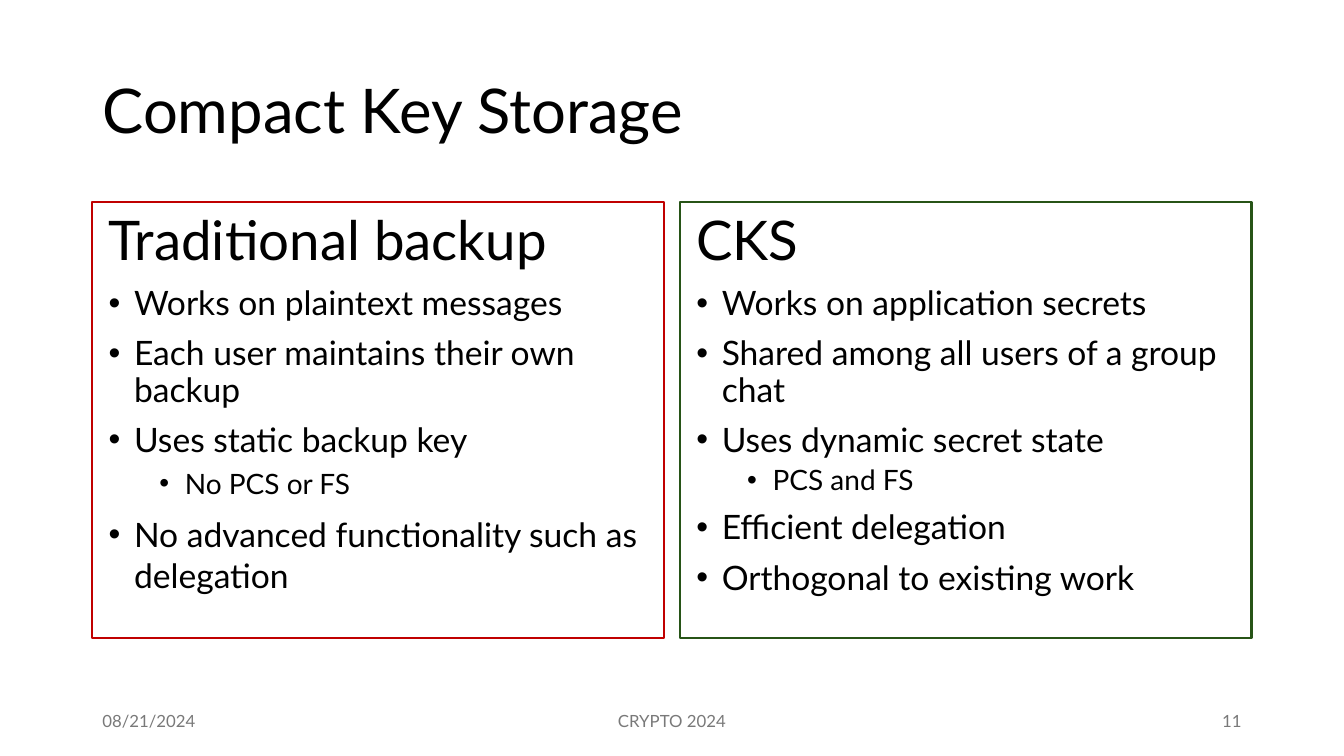
from lxml.etree import SubElement
from pptx import Presentation
from pptx.dml.color import RGBColor
from pptx.enum.shapes import MSO_SHAPE
from pptx.enum.text import MSO_ANCHOR, MSO_AUTO_SIZE, PP_ALIGN
from pptx.oxml.ns import qn
from pptx.util import Cm, Pt

FONT = "Lato"
MARGIN = 2.33
CONTENT_WIDTH = 29.21
PANEL_WIDTH = 14.4
PANEL_HEIGHT = 11
INDENT = 0.64

TRADITIONAL = [
    ("Works on plaintext messages", 0, 0.9),
    ("Each user maintains their own backup", 0, 0.9),
    ("Uses static backup key", 0, 0.9),
    ("No PCS or FS", 1, 1.0),
    ("No advanced functionality such as delegation", 0, 1.0),
]
COMPACT = [
    ("Works on application secrets", 0, 0.9),
    ("Shared among all users of a group chat", 0, 0.9),
    ("Uses dynamic secret state", 0, 0.9),
    ("PCS and FS", 1, 0.9),
    ("Efficient delegation", 0, 0.9),
    ("Orthogonal to existing work", 0, 0.9),
]


def color(value):
    return RGBColor.from_string(value)


def write(paragraph, text, size=24, fill="000000", align=PP_ALIGN.LEFT,
          spacing=1.0, before=0, bullet_level=None):
    run = paragraph.add_run()
    run.text = text
    run.font.name = FONT
    run.font.size = Pt(size)
    run.font.color.rgb = color(fill)
    paragraph.alignment = align
    paragraph.line_spacing = spacing
    paragraph.space_before = Pt(before)
    if bullet_level is not None:
        paragraph.level = bullet_level
        properties = paragraph._p.get_or_add_pPr()
        properties.set("marL", str(Cm(INDENT * (1 + 2 * bullet_level))))
        properties.set("indent", str(-Cm(INDENT)))
        SubElement(properties, qn("a:buFont")).set("typeface", "Arial")
        SubElement(properties, qn("a:buChar")).set("char", "•")


def place_title(slide, left, top, width, height, text):
    title = slide.shapes.title
    title.left, title.top = Cm(left), Cm(top)
    title.width, title.height = Cm(width), Cm(height)
    frame = title.text_frame
    frame.auto_size = MSO_AUTO_SIZE.NONE
    frame.vertical_anchor = MSO_ANCHOR.MIDDLE
    write(frame.paragraphs[0], text, size=44, spacing=0.9)


def add_panel(slide, left, top, width, height, heading, items, outline):
    panel = slide.shapes.add_shape(
        MSO_SHAPE.RECTANGLE, Cm(left), Cm(top), Cm(width), Cm(height))
    panel.shadow.inherit = False
    panel.fill.solid()
    panel.fill.fore_color.rgb = color("FFFFFF")
    panel.line.color.rgb = color(outline)
    panel.line.width = Pt(1.5)
    frame = panel.text_frame
    frame.word_wrap = True
    frame.vertical_anchor = MSO_ANCHOR.TOP
    frame.margin_left = frame.margin_right = Cm(0.41)
    frame.margin_top = frame.margin_bottom = Cm(0.3)
    write(frame.paragraphs[0], heading, size=39, spacing=0.9, before=10)
    for text, level, spacing in items:
        write(frame.add_paragraph(), text, size=24 - 4 * level, spacing=spacing,
              before=10 - 5 * level, bullet_level=level)


def add_footer(slide, left, top, width, height):
    side_width, center_width = 7.62, 11.43
    parts = [
        ("08/21/2024", left, side_width, PP_ALIGN.LEFT),
        ("CRYPTO 2024", left + (width - center_width) / 2, center_width,
         PP_ALIGN.CENTER),
        ("11", left + width - side_width, side_width, PP_ALIGN.RIGHT),
    ]
    for text, part_left, part_width, align in parts:
        box = slide.shapes.add_textbox(
            Cm(part_left), Cm(top), Cm(part_width), Cm(height))
        frame = box.text_frame
        frame.word_wrap = True
        frame.vertical_anchor = MSO_ANCHOR.MIDDLE
        write(frame.paragraphs[0], text, size=12, fill="797979", align=align)


def main():
    presentation = Presentation()
    presentation.slide_width = Cm(33.87)
    presentation.slide_height = Cm(19.05)
    slide = presentation.slides.add_slide(presentation.slide_layouts[5])
    place_title(slide, MARGIN, 1.01, CONTENT_WIDTH, 3.68, "Compact Key Storage")
    add_panel(slide, MARGIN, 5.08, PANEL_WIDTH, PANEL_HEIGHT,
              "Traditional backup", TRADITIONAL, "C00000")
    add_panel(slide, MARGIN + CONTENT_WIDTH - PANEL_WIDTH, 5.08,
              PANEL_WIDTH, PANEL_HEIGHT, "CKS", COMPACT, "275417")
    add_footer(slide, MARGIN, 17.66, CONTENT_WIDTH, 1.01)
    presentation.save("out.pptx")


if __name__ == "__main__":
    main()
